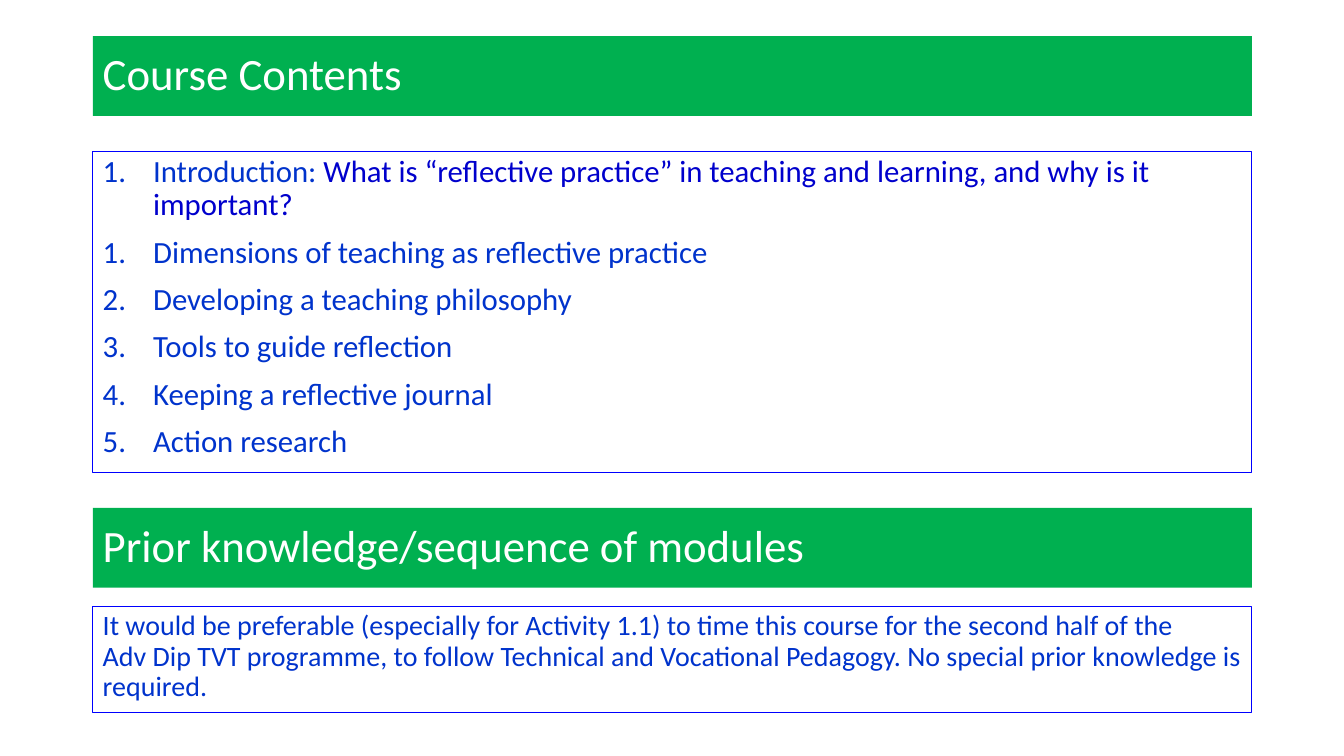
from dataclasses import dataclass

from lxml import etree
from pptx import Presentation, util as u
from pptx.dml.color import RGBColor
from pptx.enum import shapes, text
from pptx.oxml.ns import qn


@dataclass(frozen=True)
class Theme:
    """Colours, type sizes and shared measures of the slide."""
    font: str = "Calibri"
    banner: str = "00B050"
    banner_text: str = "FFFFFF"
    outline: str = "0000FF"
    body_text: str = "0033CC"
    question_text: str = "0000CC"
    heading_size: int = 32
    list_size: int = 22
    note_size: int = 20
    left: float = 2.34
    width: float = 29.21
    banner_height: float = 2.01


THEME = Theme()
QUESTION = "What is “reflective practice” in teaching and learning, and why is it important?"
TOPICS = [
    "Dimensions of teaching as reflective practice",
    "Developing a teaching philosophy",
    "Tools to guide reflection",
    "Keeping a reflective journal",
    "Action research",
]
PRIOR_KNOWLEDGE = (
    "It would be preferable (especially for Activity 1.1) to time this course "
    "for the second half of the\vAdv Dip TVT programme, to follow Technical and "
    "Vocational Pedagogy. No special prior knowledge is required."
)


def apply_format(target, values):
    """Set each attribute of target from a dict of format values."""
    for name, value in values.items():
        setattr(target, name, value)


def add_box(slide, top, height, anchor):
    """Add a full-width rectangle and return it."""
    shape = slide.shapes.add_shape(
        shapes.MSO_SHAPE.RECTANGLE,
        u.Cm(THEME.left), u.Cm(top), u.Cm(THEME.width), u.Cm(height))
    shape.shadow.inherit = False
    apply_format(shape.text_frame, {"word_wrap": True, "vertical_anchor": anchor})
    return shape


def write_paragraph(paragraph, runs, size, space_before=0):
    """Fill a left-aligned paragraph with (text, colour) runs."""
    apply_format(paragraph, {
        "alignment": text.PP_ALIGN.LEFT,
        "line_spacing": 0.9,
        "space_before": u.Pt(space_before),
    })
    for words, colour in runs:
        paragraph.add_run().text = words.split("\v")[0]
        for line in words.split("\v")[1:]:
            paragraph.add_line_break()
            paragraph.add_run().text = line
        for run in paragraph.runs:
            if run.text in words.split("\v"):
                apply_format(run.font, {"name": THEME.font, "size": u.Pt(size)})
                run.font.color.rgb = RGBColor.from_string(colour)


def number_paragraph(paragraph):
    """Give a paragraph a hanging automatic number."""
    properties = paragraph._p.get_or_add_pPr()
    indent = u.Cm(1.27)
    properties.set("marL", str(indent))
    properties.set("indent", str(-indent))
    etree.SubElement(properties, qn("a:buFont"), typeface="+mj-lt")
    etree.SubElement(properties, qn("a:buAutoNum"), type="arabicPeriod")


def add_banner(slide, top, heading):
    """Add a green section heading."""
    shape = add_box(slide, top, THEME.banner_height, text.MSO_ANCHOR.MIDDLE)
    shape.fill.solid()
    shape.fill.fore_color.rgb = RGBColor.from_string(THEME.banner)
    shape.line.fill.background()
    write_paragraph(shape.text_frame.paragraphs[0],
                    [(heading, THEME.banner_text)], THEME.heading_size)


def add_panel(slide, top, height, paragraphs, size, numbered=False):
    """Add an outlined panel holding one paragraph per list of runs."""
    shape = add_box(slide, top, height, text.MSO_ANCHOR.TOP)
    shape.fill.background()
    shape.line.color.rgb = RGBColor.from_string(THEME.outline)
    shape.line.width = u.Pt(0.75)
    frame = shape.text_frame
    for index, runs in enumerate(paragraphs):
        paragraph = frame.add_paragraph() if index else frame.paragraphs[0]
        write_paragraph(paragraph, runs, size, space_before=10)
        if numbered:
            paragraph.level = 0 if index else 1
            number_paragraph(paragraph)


def main():
    """Build the course contents slide."""
    presentation = Presentation()
    apply_format(presentation, {"slide_width": u.Cm(33.87), "slide_height": u.Cm(19.05)})
    slide = presentation.slides.add_slide(presentation.slide_layouts[6])
    introduction = [("Introduction: ", THEME.body_text), (QUESTION, THEME.question_text)]
    topics = [[(topic, THEME.body_text)] for topic in TOPICS]
    add_banner(slide, 0.91, "Course Contents")
    add_panel(slide, 3.81, 8.1, [introduction, *topics], THEME.list_size, numbered=True)
    add_banner(slide, 12.8, "Prior knowledge/sequence of modules")
    add_panel(slide, 15.29, 2.67, [[(PRIOR_KNOWLEDGE, THEME.body_text)]], THEME.note_size)
    presentation.save("out.pptx")


if __name__ == "__main__":
    main()
